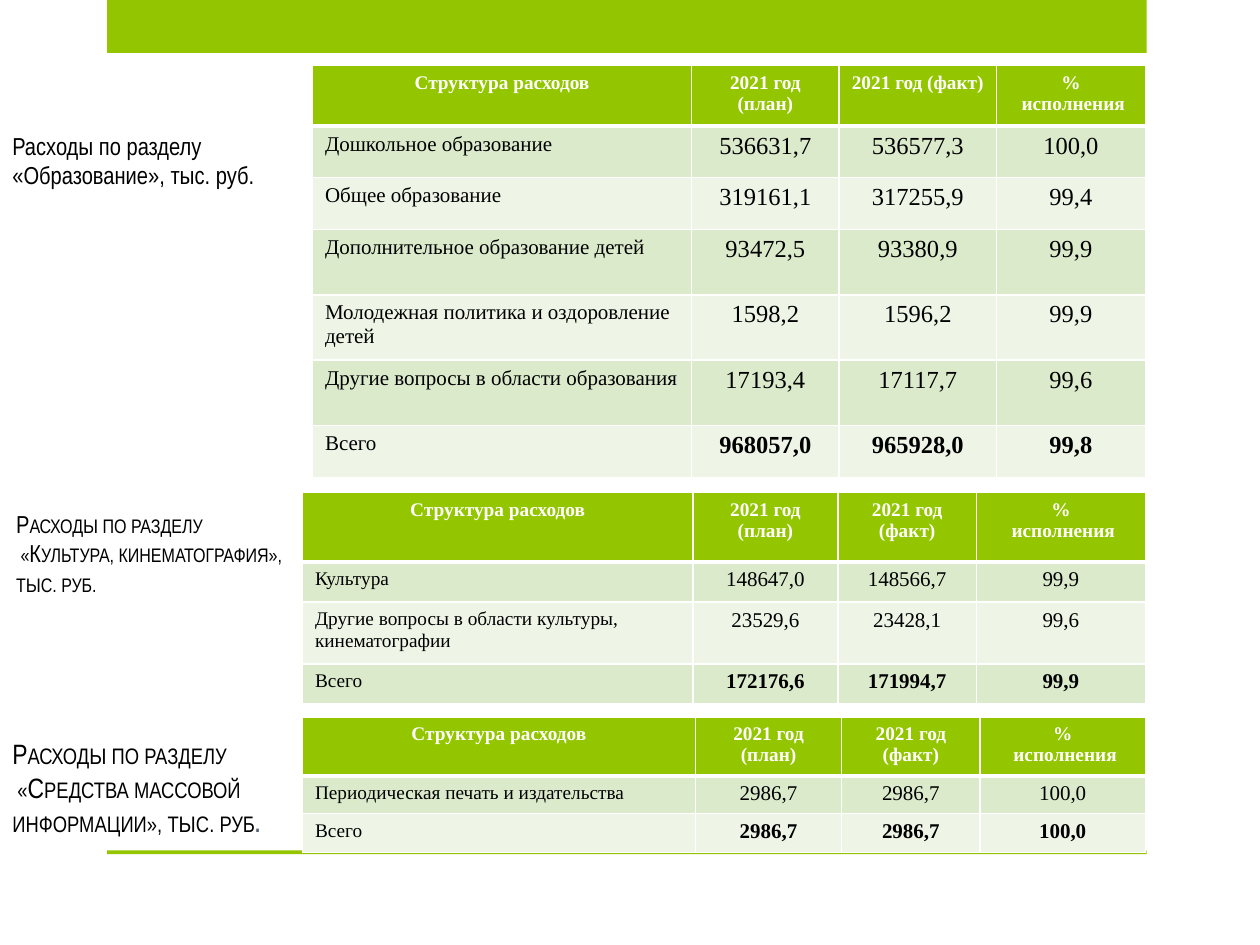
from lxml import etree
from pptx import Presentation
from pptx.dml.color import RGBColor
from pptx.enum import shapes, text
from pptx.oxml import ns
from pptx.util import Inches, Pt

GREEN = RGBColor(0x94, 0xC6, 0x00)
PALE = RGBColor(0xDC, 0xEA, 0xCC)
LIGHT = RGBColor(0xEE, 0xF5, 0xE7)
WHITE = RGBColor(0xFF, 0xFF, 0xFF)
BLACK = RGBColor(0, 0, 0)
GREY = RGBColor(0x57, 0x5F, 0x6D)

HEAD = ("Структура расходов", "2021 год (план)", "2021 год (факт)", "%\n исполнения")
SCHOOL = (
    ("Дошкольное образование", "536631,7", "536577,3", "100,0"),
    ("Общее образование", "319161,1", "317255,9", "99,4"),
    ("Дополнительное образование детей", "93472,5", "93380,9", "99,9"),
    ("Молодежная политика и оздоровление детей", "1598,2", "1596,2", "99,9"),
    ("Другие вопросы в области образования", "17193,4", "17117,7", "99,6"),
    ("Всего", "968057,0", "965928,0", "99,8"),
)
ARTS = (
    ("Культура", "148647,0", "148566,7", "99,9"),
    ("Другие вопросы в области культуры, кинематографии", "23529,6", "23428,1", "99,6"),
    ("Всего", "172176,6", "171994,7", "99,9"),
)
MEDIA = (
    ("Периодическая печать и издательства", "2986,7", "2986,7", "100,0"),
    ("Всего", "2986,7", "2986,7", "100,0"),
)


def style(par, name, size, color, bold=False):
    """Set the font of a whole paragraph."""
    font = par.font
    font.name, font.size, font.bold = name, Pt(size), bold
    font.color.rgb = color


def add_bar(slide, top, height):
    """Draw a green band across the slide."""
    bar = slide.shapes.add_shape(shapes.MSO_SHAPE.RECTANGLE, Inches(0.85), Inches(top),
                                 Inches(8.25), Inches(height))
    bar.shadow.inherit = False
    bar.fill.solid()
    bar.fill.fore_color.rgb = GREEN
    bar.line.fill.background()


def add_label(slide, box, lines, size, small=True):
    """Add a section label and return its last paragraph."""
    frame = slide.shapes.add_textbox(*map(Inches, box)).text_frame
    frame.word_wrap = True
    frame.auto_size = text.MSO_AUTO_SIZE.SHAPE_TO_FIT_TEXT
    frame.text = lines
    for par in frame.paragraphs:
        style(par, "Arial Narrow", size, BLACK)
        if small:
            par._p.get_or_add_pPr().get_or_add_defRPr().set("cap", "small")
    return frame.paragraphs[-1]


def set_edges(cell, top, bottom):
    """Give a cell white borders, placed ahead of its fill."""
    props = cell._tc.get_or_add_tcPr()
    widths = {"lnL": 1, "lnR": 1, "lnT": top, "lnB": bottom}
    for i, (side, width) in enumerate(widths.items()):
        line = etree.Element(ns.qn(f"a:{side}"), w=str(Pt(width)))
        fill = etree.SubElement(line, ns.qn("a:solidFill"))
        etree.SubElement(fill, ns.qn("a:srgbClr"), val=str(WHITE))
        props.insert(i, line)


def fill_cell(cell, words, row, col, last, sizes):
    """Write and format one cell by its place in the table."""
    head = row == 0
    cell.text = words
    cell.fill.solid()
    cell.fill.fore_color.rgb = GREEN if head else PALE if row % 2 else LIGHT
    set_edges(cell, 3 if row == 1 else 1, 3 if head else 1)
    size = 11 if head else sizes[col > 0]
    for par in cell.text_frame.paragraphs:
        if head or col:
            par.alignment = text.PP_ALIGN.CENTER
        style(par, "Times New Roman", size, WHITE if head else BLACK,
              head or (last and col > 0))


def add_grid(slide, left, top, cols, rows, data, sizes):
    """Add a spending table; sizes are for names and for numbers."""
    box = map(Inches, (left, top, sum(cols), sum(rows)))
    grid = slide.shapes.add_table(len(rows), len(cols), *box).table
    for col, width in zip(grid.columns, cols):
        col.width = Inches(width)
    for row, height in zip(grid.rows, rows):
        row.height = Inches(height)
    for r, line in enumerate((HEAD, *data)):
        for c, words in enumerate(line):
            fill_cell(grid.cell(r, c), words, r, c, r == len(data), sizes)


def main():
    """Build the spending slide."""
    deck = Presentation()
    deck.slide_width, deck.slide_height = Inches(10), Inches(7.5)
    slide = deck.slides.add_slide(deck.slide_layouts[6])
    add_bar(slide, 0, 0.42)
    add_bar(slide, 6.75, 0.03)

    add_label(slide, (0, 0.99, 3.27, 0.57),
              "Расходы по разделу\n«Образование», тыс. руб.", 14, small=False)
    add_grid(slide, 2.48, 0.52, (3.01, 1.17, 1.25, 1.18),
             (0.48, 0.41, 0.41, 0.52, 0.52, 0.52, 0.41), SCHOOL, (12, 14))

    add_label(slide, (0.03, 3.99, 2.4, 0.81),
              "Расходы по разделу\n «Культура, кинематография»,\vтыс. руб.", 14)
    add_grid(slide, 2.4, 3.91, (3.1, 1.15, 1.1, 1.34),
             (0.55, 0.32, 0.49, 0.32), ARTS, (11, 12))

    end = add_label(slide, (0, 5.8, 2.86, 0.91),
                    "Расходы по разделу\n «Средства массовой\nинформации», тыс. руб", 16)
    dot = end.add_run()
    dot.text = "."
    dot.font.bold = True
    dot.font.color.rgb = GREY
    add_grid(slide, 2.4, 5.69, (3.12, 1.16, 1.1, 1.31),
             (0.46, 0.3, 0.31), MEDIA, (11, 12))
    deck.save("out.pptx")


if __name__ == "__main__":
    main()
